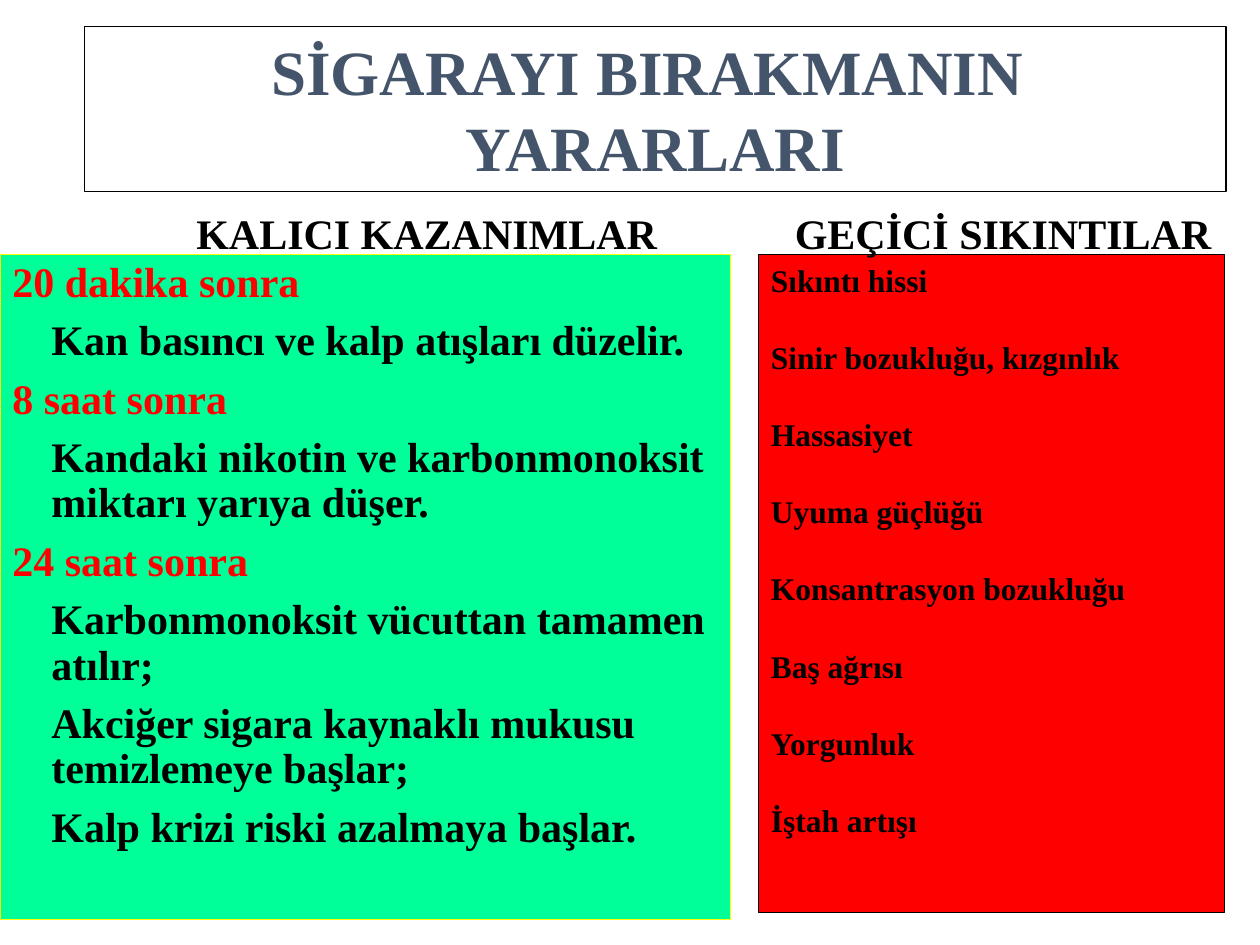
from pptx import Presentation
from pptx.dml.color import RGBColor
from pptx.enum.shapes import MSO_SHAPE
from pptx.enum.text import MSO_ANCHOR, PP_ALIGN
from pptx.util import Inches, Pt

COLOURS = {
    "black": "000000",
    "red": "FF0000",
    "green": "00FF99",
    "yellow": "FFFF00",
    "slate": "44546A",
}
FONT = "Times New Roman"

TITLE = ["SİGARAYI BIRAKMANIN ", "YARARLARI"]
GAINS = [
    ("20 dakika sonra", ["Kan basıncı ve kalp atışları düzelir."]),
    ("8 saat sonra", ["Kandaki nikotin ve karbonmonoksit miktarı yarıya düşer."]),
    ("24 saat sonra", [
        "Karbonmonoksit vücuttan tamamen atılır;",
        "Akciğer sigara kaynaklı mukusu temizlemeye başlar;",
        "Kalp krizi riski azalmaya başlar.",
    ]),
]
TROUBLES = [
    "Sıkıntı hissi",
    "Sinir bozukluğu, kızgınlık",
    "Hassasiyet",
    "Uyuma güçlüğü",
    "Konsantrasyon bozukluğu",
    "Baş ağrısı",
    "Yorgunluk",
    "İştah artışı",
]


def colour(name):
    return RGBColor.from_string(COLOURS[name])


def write(frame, text, size=24, ink="black", align=PP_ALIGN.LEFT,
          line=1.0, before=0, after=0, indent=0):
    """Add one bold paragraph, using the empty first one if it is free."""
    para = frame.paragraphs[0]
    if para.runs:
        para = frame.add_paragraph()
    para.alignment = align
    para.line_spacing = line
    para.space_before = Pt(before)
    para.space_after = Pt(after)
    if indent:
        para._p.get_or_add_pPr().set("marL", str(Inches(indent)))
    span = para.add_run()
    span.text = text
    span.font.name = FONT
    span.font.size = Pt(size)
    span.font.bold = True
    span.font.color.rgb = colour(ink)


def add_panel(page, box, fill=None, outline="black"):
    """Add a bordered rectangle and return its text frame."""
    panel = page.shapes.add_shape(MSO_SHAPE.RECTANGLE, *map(Inches, box))
    panel.shadow.inherit = False
    if fill:
        panel.fill.solid()
        panel.fill.fore_color.rgb = colour(fill)
    else:
        panel.fill.background()
    panel.line.color.rgb = colour(outline)
    panel.line.width = Pt(0.75)
    frame = panel.text_frame
    frame.word_wrap = True
    frame.vertical_anchor = MSO_ANCHOR.TOP
    return frame


def add_title(page, box):
    frame = add_panel(page, box)
    for text in TITLE:
        write(frame, text, size=36, ink="slate", align=PP_ALIGN.CENTER)


def add_heading(page, box, text):
    frame = page.shapes.add_textbox(*map(Inches, box)).text_frame
    frame.word_wrap = False
    write(frame, text)


def add_gains(page, box):
    frame = add_panel(page, box, fill="green", outline="yellow")
    for time, effects in GAINS:
        write(frame, time, ink="red", line=0.9, before=7.5)
        for effect in effects:
            write(frame, effect, line=0.9, before=7.5, indent=0.31)


def add_troubles(page, box):
    frame = add_panel(page, box, fill="red")
    for trouble in TROUBLES:
        write(frame, trouble, size=18, after=22.5)


def main():
    deck = Presentation()
    deck.slide_width, deck.slide_height = Inches(10), Inches(7.5)
    page = deck.slides.add_slide(deck.slide_layouts[6])
    add_gains(page, (0, 2.02, 5.8, 5.28))
    add_title(page, (0.67, 0.21, 9.06, 1.31))
    add_troubles(page, (6.02, 2.02, 3.7, 5.22))
    add_heading(page, (1.46, 1.6, 3.86, 0.5), "KALICI KAZANIMLAR")
    add_heading(page, (6.21, 1.6, 3.51, 0.5), "GEÇİCİ SIKINTILAR")
    deck.save("out.pptx")


if __name__ == "__main__":
    main()
